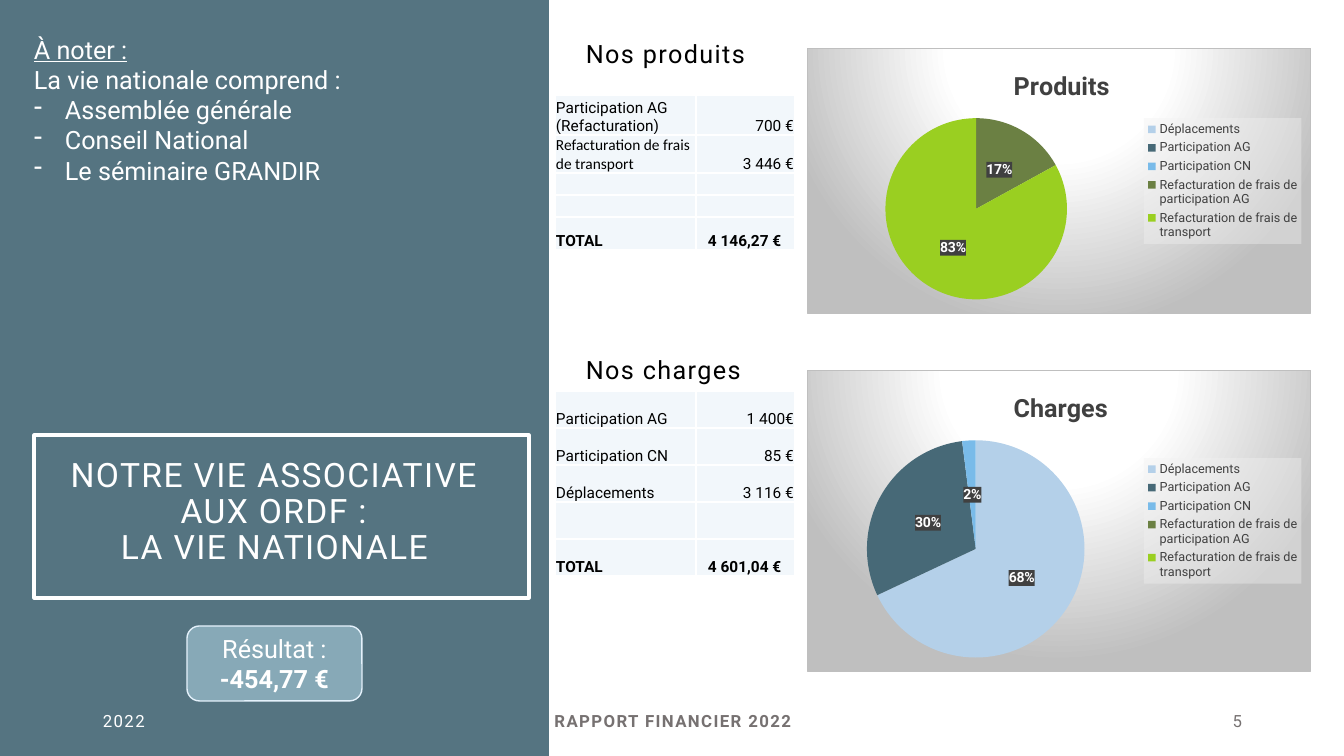
from dataclasses import dataclass

from lxml import etree
from pptx import Presentation
from pptx.chart.data import CategoryChartData
from pptx.dml.color import RGBColor
from pptx.enum.chart import XL_CHART_TYPE, XL_LABEL_POSITION, XL_LEGEND_POSITION
from pptx.enum.shapes import MSO_SHAPE
from pptx.enum.text import MSO_ANCHOR, PP_ALIGN
from pptx.oxml import parse_xml
from pptx.oxml.ns import qn
from pptx.util import Emu, Pt

RECT, ROUND = MSO_SHAPE.RECTANGLE, MSO_SHAPE.ROUNDED_RECTANGLE
LEFT, MID, RIGHT = PP_ALIGN.LEFT, PP_ALIGN.CENTER, PP_ALIGN.RIGHT
TOP, CENTER, LOW = MSO_ANCHOR.TOP, MSO_ANCHOR.MIDDLE, MSO_ANCHOR.BOTTOM
PIE = XL_CHART_TYPE.PIE
NS = ('xmlns:a="http://schemas.openxmlformats.org/drawingml/2006/main" '
      'xmlns:c="http://schemas.openxmlformats.org/drawingml/2006/chart"')


@dataclass(frozen=True)
class Theme:
    font: str = "Roboto"
    alt: str = "Calibri"
    white: str = "FFFFFF"
    black: str = "000000"
    slate: str = "476977"
    badge: str = "87A9B7"
    rim: str = "E4F1FB"
    cell: str = "F2F7FB"
    gray: str = "767171"
    dark: str = "404040"
    silver: str = "BFBFBF"
    pale: str = "F2F2F2"
    pie: tuple = ("B4D0E9", "476977", "79BBE9", "6B8043", "9ACF21")
    title: int = 24
    body: int = 18
    foot: int = 12
    table: int = 11
    label: int = 10
    legend: int = 9


THEME = Theme()


def px(n):
    return Emu(round(n * 914400 / 100.8))


def rgb(code):
    return RGBColor.from_string(code)


def style(font, size, color, bold=False, name=THEME.font):
    font.name, font.size, font.bold = name, Pt(size), bold
    font.color.rgb = rgb(color)


def write(frame, text, size=THEME.body, color=THEME.white, bold=False, line=None,
          under=False, track=0, align=LEFT, dash=0, name=THEME.font):
    """Add one paragraph; a vertical tab in the text breaks the line."""
    para = frame.paragraphs[0]
    if para.runs:
        para = frame.add_paragraph()
    para.alignment = align
    if line:
        para.line_spacing = line
    if dash:
        props = para._p.get_or_add_pPr()
        props.set("marL", str(px(dash)))
        props.set("indent", str(-px(dash)))
        etree.SubElement(props, qn("a:buChar"), char="-")
    for i, part in enumerate(text.split("\v")):
        if i:
            para.add_line_break()
        run = para.add_run()
        run.text = part
        style(run.font, size, color, bold, name)
        run.font.underline = under
        if track:
            run._r.get_or_add_rPr().set("spc", str(track * 100))


def layout(parent, spot, index, size, box):
    """Place a chart part by hand, as shares of the chart size."""
    for old in parent.findall(qn("c:layout")):
        parent.remove(old)
    tags = "".join(f'<c:{k}Mode val="edge"/>' for k in "xy")
    vals = [n / size[i % 2] for i, n in enumerate(box)]
    tags += "".join(f'<c:{k} val="{v:.3f}"/>' for k, v in zip("xywh", vals))
    parent.insert(index, parse_xml(
        f"<c:layout {NS}><c:manualLayout>{spot}{tags}</c:manualLayout></c:layout>"))


def paint(color, alpha=100):
    return parse_xml(
        f'<c:spPr {NS}><a:solidFill><a:srgbClr val="{color}">'
        f'<a:alpha val="{alpha * 1000}"/></a:srgbClr></a:solidFill></c:spPr>')


class Deck:
    def __init__(self, theme, wide, high):
        self.t = theme
        self.prs = Presentation()
        self.prs.slide_width, self.prs.slide_height = px(wide), px(high)
        self.slide = self.prs.slides.add_slide(self.prs.slide_layouts[6])
        self.shapes = self.slide.shapes

    def shape(self, kind, box, fill=None, line=None, width=1, alpha=100):
        item = self.shapes.add_shape(kind, *map(px, box))
        item.shadow.inherit = False
        if fill:
            item.fill.solid()
            item.fill.fore_color.rgb = rgb(fill)
            tint = item.fill._xPr.find(".//" + qn("a:srgbClr"))
            etree.SubElement(tint, qn("a:alpha"), val=str(alpha * 1000))
        else:
            item.fill.background()
        if line:
            item.line.color.rgb = rgb(line)
            item.line.width = Pt(width)
        else:
            item.line.fill.background()
        item.text_frame.word_wrap = True
        item.text_frame.vertical_anchor = CENTER
        return item.text_frame

    def text(self, box, anchor=CENTER):
        frame = self.shapes.add_textbox(*map(px, box)).text_frame
        frame.word_wrap = True
        frame.vertical_anchor = anchor
        return frame

    def table(self, left, top, cols, rows, data):
        grid = self.shapes.add_table(len(rows), len(cols), px(left), px(top),
                                     px(sum(cols)), px(sum(rows))).table
        grid.first_row = grid.horz_banding = False
        for col, n in zip(grid.columns, cols):
            col.width = px(n)
        for row, n, texts in zip(grid.rows, rows, data):
            row.height = px(n)
            total = texts[0] == "TOTAL"
            for i, (cell, text) in enumerate(zip(row.cells, texts)):
                self.cell(cell, text, total, i)

    def cell(self, cell, text, total, col):
        cell.margin_left = px(12 if total and col else 1)
        cell.margin_right = cell.margin_top = px(1)
        cell.margin_bottom = 0
        cell.vertical_anchor = LOW
        props = cell._tc.get_or_add_tcPr()
        for side in "LRTB":
            props.append(parse_xml(
                f'<a:ln{side} {NS} w="12700"><a:solidFill><a:srgbClr '
                f'val="{self.t.white}"/></a:solidFill></a:ln{side}>'))
        cell.fill.solid()
        cell.fill.fore_color.rgb = rgb(self.t.cell)
        if text:
            other = text.startswith("Refacturation")
            write(cell.text_frame, text, self.t.table, self.t.black, total,
                  align=RIGHT if col and not total else LEFT,
                  name=self.t.alt if other else self.t.font)
        else:
            etree.SubElement(cell.text_frame.paragraphs[0]._p,
                             qn("a:endParaRPr"), sz=str(self.t.table * 100))

    def pie(self, box, title, cats, vals, plot, key):
        data = CategoryChartData()
        data.categories = cats
        data.add_series(title, vals)
        chart = self.shapes.add_chart(PIE, *map(px, box), data).chart
        size, root = box[2:], chart._chartSpace.chart
        style(chart.font, self.t.label, self.t.black)
        # Title
        chart.has_title = True
        write(chart.chart_title.text_frame, title, color=self.t.dark, bold=True)
        layout(root.find(qn("c:title")), "", 1, size, (202, 16))
        # Legend
        chart.has_legend = True
        chart.legend.position = XL_LEGEND_POSITION.RIGHT
        chart.legend.include_in_layout = False
        style(chart.legend.font, self.t.legend, self.t.dark)
        legend = root.find(qn("c:legend"))
        layout(legend, "", 1, size, key)
        legend.find(qn("c:txPr")).addprevious(paint(self.t.pale, 39))
        # Slices and labels
        pie = chart.plots[0]
        pie.vary_by_categories = True
        for i, color in enumerate(self.t.pie):
            fill = pie.series[0].points[i].format.fill
            fill.solid()
            fill.fore_color.rgb = rgb(color)
        pie.has_data_labels = True
        tags = pie.data_labels
        tags.show_percentage, tags.show_value = True, False
        tags.number_format, tags.number_format_is_linked = "0%", False
        tags.position = XL_LABEL_POSITION.CENTER
        style(tags.font, self.t.label, self.t.white, True)
        tags._element.find(qn("c:txPr")).addprevious(paint(self.t.dark))
        layout(root.find(qn("c:plotArea")), '<c:layoutTarget val="inner"/>',
               0, size, plot)
        # Backdrop
        stops = ((0, self.t.white), (39, self.t.white), (100, self.t.silver))
        marks = "".join(f'<a:gs pos="{p * 1000}"><a:srgbClr val="{c}"/></a:gs>'
                        for p, c in stops)
        root.addnext(parse_xml(
            f'<c:spPr {NS}><a:gradFill><a:gsLst>{marks}</a:gsLst><a:path path="circle">'
            '<a:fillToRect l="50000" t="-80000" r="50000" b="180000"/></a:path>'
            f'</a:gradFill><a:ln w="9525"><a:solidFill><a:srgbClr val="{self.t.silver}"/>'
            '</a:solidFill></a:ln></c:spPr>'))


def main():
    t = THEME
    deck = Deck(t, 1344, 756)

    # Left panel and slide title
    panel = deck.shape(RECT, (0, 0, 549, 756), t.slate, alpha=92)
    panel.margin_top = px(274)
    write(panel, "NOTRE VIE ASSOCIATIVE\vAUX ORDF :\vLA VIE NATIONALE", t.title,
          track=1, align=MID, line=0.9)
    deck.shape(RECT, (34, 435, 495, 163), line=t.white, width=2.25)

    # Footer
    for left, wide, text, color, align in (
            (93, 302, "2022", t.white, LEFT),
            (446, 454, "RAPPORT FINANCIER 2022", t.gray, MID),
            (950, 302, "5", t.gray, RIGHT)):
        write(deck.text((left, 701, wide, 40)), text, t.foot, color,
              bold=align == MID, track=1, align=align)

    # Section headings
    for top, text in ((15, "Nos produits"), (331, "Nos charges")):
        write(deck.text((576, top, 646, 47)), text, color=t.black, track=1, line=2)

    # Tables
    cols, blank = (141, 99), ("", "")
    deck.table(555, 391, cols, [37] * 5, (
        ("Participation AG", "1 400€"), ("Participation CN", "85 €"),
        ("Déplacements", "3 116 €"), blank, ("TOTAL", "4 601,04 €")))
    deck.table(555, 95, cols, (40, 37, 22, 22, 33), (
        ("Participation AG (Refacturation)", "700 €"),
        ("Refacturation de frais de transport", "3 446 €"),
        blank, blank, ("TOTAL", "4 146,27 €")))

    # Result badge
    badge = deck.shape(ROUND, (187, 626, 175, 75), t.badge, t.rim)
    write(badge, "Résultat :", align=MID)
    write(badge, "-454,77 €", bold=True, align=MID)

    # Notes on the panel
    memo = deck.text((24, 29, 478, 194), TOP)
    write(memo, "À noter :", under=True)
    write(memo, "La vie nationale comprend :")
    for item in ("Assemblée générale", "Conseil National", "Le séminaire GRANDIR"):
        write(memo, item, dash=31)

    # Pie charts
    cats = ("Déplacements", "Participation AG", "Participation CN",
            "Refacturation de frais de participation AG",
            "Refacturation de frais de transport")
    deck.pie((807, 370, 504, 302), "Charges", cats, (68, 30, 2, None, None),
             (59, 70, 219, 218), (337, 88, 158, 126))
    deck.pie((807, 48, 504, 266), "Produits", cats, (None, None, None, 17, 83),
             (78, 70, 182, 182), (337, 70, 158, 126))

    deck.prs.save("out.pptx")


if __name__ == "__main__":
    main()
